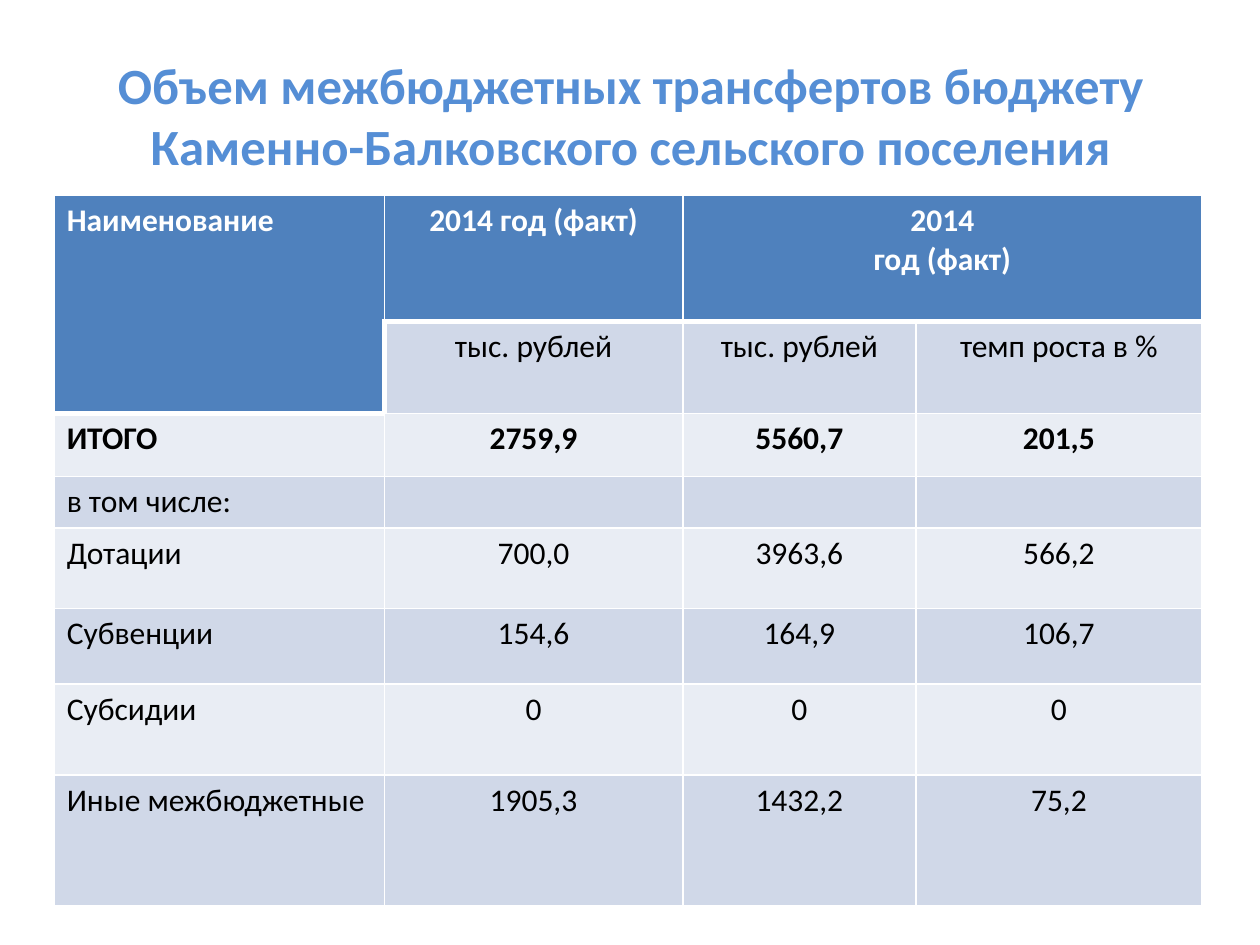
from dataclasses import dataclass

from pptx import Presentation
from pptx.dml.color import RGBColor
from pptx.enum.text import MSO_ANCHOR, PP_ALIGN
from pptx.oxml import parse_xml
from pptx.oxml.ns import nsdecls
from pptx.util import Inches, Pt

LEFT, CENTER = PP_ALIGN.LEFT, PP_ALIGN.CENTER
MIDDLE = MSO_ANCHOR.MIDDLE
WHITE = RGBColor(0xFF, 0xFF, 0xFF)
BLACK = RGBColor(0, 0, 0)
SKY = RGBColor(0x55, 0x8E, 0xD5)
BLUE = RGBColor(0x4F, 0x81, 0xBD)
PALE = RGBColor(0xE9, 0xED, 0xF4)
GREY = RGBColor(0xD0, 0xD8, 0xE8)
FACE = "Calibri"
THIN, THICK = 1, 3
COLS = (2.62, 2.37, 1.85, 2.27)


@dataclass
class Row:
    high: float
    texts: tuple
    bold: bool = False


ROWS = (
    Row(1, ("Наименование", "2014 год (факт)", "2014\nгод (факт)", ""), True),
    Row(0.73, ("", "тыс. рублей", "тыс. рублей", "темп роста в %")),
    Row(0.5, ("ИТОГО", "2759,9", "5560,7", "201,5"), True),
    Row(0.41, ("в том числе:", "", "", "")),
    Row(0.64, ("Дотации", "700,0", "3963,6", "566,2")),
    Row(0.6, ("Субвенции", "154,6", "164,9", "106,7")),
    Row(0.72, ("Субсидии", "0", "0", "0")),
    Row(1.04, ("Иные межбюджетные", "1905,3", "1432,2", "75,2")),
)


def style(frame, size: float, color: RGBColor, bold: bool, align) -> None:
    for para in frame.paragraphs:
        para.alignment = align
        font = para.font
        font.name, font.size, font.bold = FACE, Pt(size), bold
        font.color.rgb = color


def widths(row: int, col: int) -> dict:
    """Border widths: heavy lines run under the header block."""
    head = row == 0 or (row == 1 and col == 0)
    return {
        "L": THICK if (row, col) == (1, 1) else THIN,
        "R": THICK if (row, col) == (1, 0) else THIN,
        "T": THICK if row == 1 or (row, col) == (2, 0) else THIN,
        "B": THICK if head else THIN,
    }


def edge(cell, sides: dict) -> None:
    props = cell._tc.get_or_add_tcPr()
    for spot, (side, width) in enumerate(sides.items()):
        props.insert(spot, parse_xml(
            f'<a:ln{side} {nsdecls("a")} w="{Pt(width)}"><a:solidFill>'
            f'<a:srgbClr val="{WHITE}"/></a:solidFill></a:ln{side}>'))


def add_title(slide, text: str) -> None:
    box = slide.shapes.add_textbox(
        Inches(0.51), Inches(0.36), Inches(9), Inches(1.1))
    frame = box.text_frame
    frame.word_wrap = True
    frame.vertical_anchor = MIDDLE
    frame.text = text
    style(frame, 29, SKY, True, CENTER)


def add_grid(slide) -> None:
    high = sum(row.high for row in ROWS)
    table = slide.shapes.add_table(
        len(ROWS), len(COLS), Inches(0.43), Inches(1.55),
        Inches(sum(COLS)), Inches(high)).table
    for col, wide in enumerate(COLS):
        table.columns[col].width = Inches(wide)
    for r, row in enumerate(ROWS):
        table.rows[r].height = Inches(row.high)
        for c, text in enumerate(row.texts):
            cell = table.cell(r, c)
            head = r == 0 or (r == 1 and c == 0)
            cell.text = text
            style(cell.text_frame, 18, WHITE if head else BLACK, row.bold,
                  CENTER if c else LEFT)
            cell.fill.solid()
            cell.fill.fore_color.rgb = BLUE if head else (PALE, GREY)[r % 2]
            edge(cell, widths(r, c))
    table.cell(0, 0).merge(table.cell(1, 0))
    table.cell(0, 2).merge(table.cell(0, 3))


def main() -> None:
    deck = Presentation()
    deck.slide_width, deck.slide_height = Inches(10), Inches(7.5)
    slide = deck.slides.add_slide(deck.slide_layouts[6])
    add_title(slide, "Объем межбюджетных трансфертов бюджету "
                     "Каменно-Балковского сельского поселения")
    add_grid(slide)
    deck.save("out.pptx")


if __name__ == "__main__":
    main()
